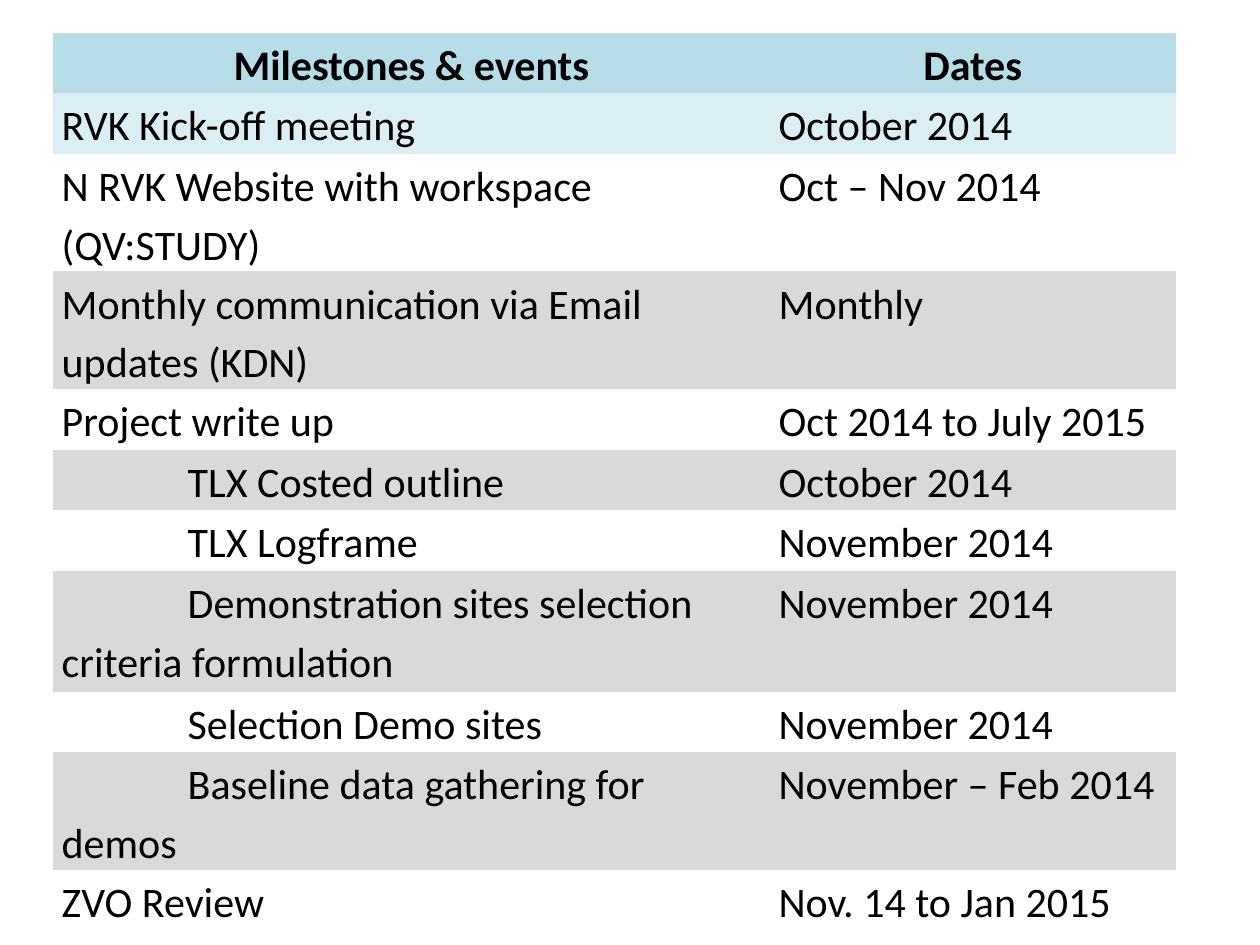
from dataclasses import dataclass

from pptx import Presentation, util as u
from pptx.dml.color import RGBColor
from pptx.enum import text
from pptx.oxml.ns import qn


@dataclass(frozen=True)
class Theme:
    font: str = "Calibri"
    size: int = 24
    lead: float = 1.15
    ink: str = "000000"
    head: str = "B6DDE8"
    first: str = "DAEEF3"
    band: str = "D9D9D9"
    plain: str = "{2D5ABB26-0587-4C30-8999-92F81FD0307C}"  # no style, no grid


class Deck:
    def __init__(self, theme, wide=10, high=7.5):
        self.theme = theme
        self.prs = Presentation()
        self.prs.slide_width = u.Inches(wide)
        self.prs.slide_height = u.Inches(high)
        self.slide = self.prs.slides.add_slide(self.prs.slide_layouts[6])

    def span(self, x, y):
        """Turn shares of the slide into lengths."""
        return (u.Emu(round(x * self.prs.slide_width)),
                u.Emu(round(y * self.prs.slide_height)))

    def table(self, rows, at, size, cols, step):
        frame = self.slide.shapes.add_table(
            len(rows), len(cols), *self.span(*at), *self.span(*size))
        grid = frame.table
        # Plain style, so that only the cells carry colour
        grid.first_row = grid.horz_banding = False
        grid._tbl.tblPr.find(qn("a:tableStyleId")).text = self.theme.plain
        for col, share in zip(grid.columns, cols):
            col.width = self.span(share, 0)[0]
        for i, (*words, lines, sub) in enumerate(rows):
            grid.rows[i].height = self.span(0, step * lines)[1]
            for j, word in enumerate(words):
                self.cell(grid.cell(i, j), word, i, sub and j == 0)
        frame.height = self.span(*size)[1]

    def cell(self, cell, word, row, sub):
        t = self.theme
        side = u.Inches(0.07)
        form = dict(margin_left=side, margin_right=side,
                    margin_top=0, margin_bottom=0)
        for key, val in form.items():
            setattr(cell, key, val)
        # Head, first row, then every other row in grey
        tint = {0: t.head, 1: t.first}.get(row, t.band if row % 2 else None)
        if tint:
            cell.fill.solid()
            cell.fill.fore_color.rgb = RGBColor.from_string(tint)
        else:
            cell.fill.background()
        para = cell.text_frame.paragraphs[0]
        para.line_spacing = t.lead
        para.alignment = text.PP_ALIGN.LEFT if row else text.PP_ALIGN.CENTER
        if sub:
            para._p.get_or_add_pPr().set("indent", str(u.Inches(1)))
        run = para.add_run()
        run.text = word
        look = dict(name=t.font, size=u.Pt(t.size), bold=row == 0)
        for key, val in look.items():
            setattr(run.font, key, val)
        run.font.color.rgb = RGBColor.from_string(t.ink)


# Milestone, date, lines of height, indented as a sub-task
PLAN = [
    ("Milestones & events", "Dates", 1, False),
    ("RVK Kick-off meeting", "October 2014", 1, False),
    ("N RVK Website with workspace (QV:STUDY)", "Oct – Nov 2014", 1, False),
    ("Monthly communication via Email updates (KDN)", "Monthly", 1, False),
    ("Project write up", "Oct 2014 to July 2015", 1, False),
    ("TLX Costed outline", "October 2014", 1, True),
    ("TLX Logframe", "November 2014", 1, True),
    ("Demonstration sites selection criteria formulation",
     "November 2014", 2, True),
    ("Selection Demo sites", "November 2014", 1, True),
    ("Baseline data gathering for demos", "November – Feb 2014", 1, True),
    ("ZVO Review", "Nov. 14 to Jan 2015", 1, False),
]


def main():
    deck = Deck(Theme())
    # Lengths in inches over the slide's size give the shares
    deck.table(PLAN, at=(0.42 / 10, 0.26 / 7.5), size=(8.92 / 10, 7.07 / 7.5),
               cols=(5.69 / 10, 3.22 / 10), step=0.48 / 7.5)
    deck.prs.save("out.pptx")


if __name__ == "__main__":
    main()
